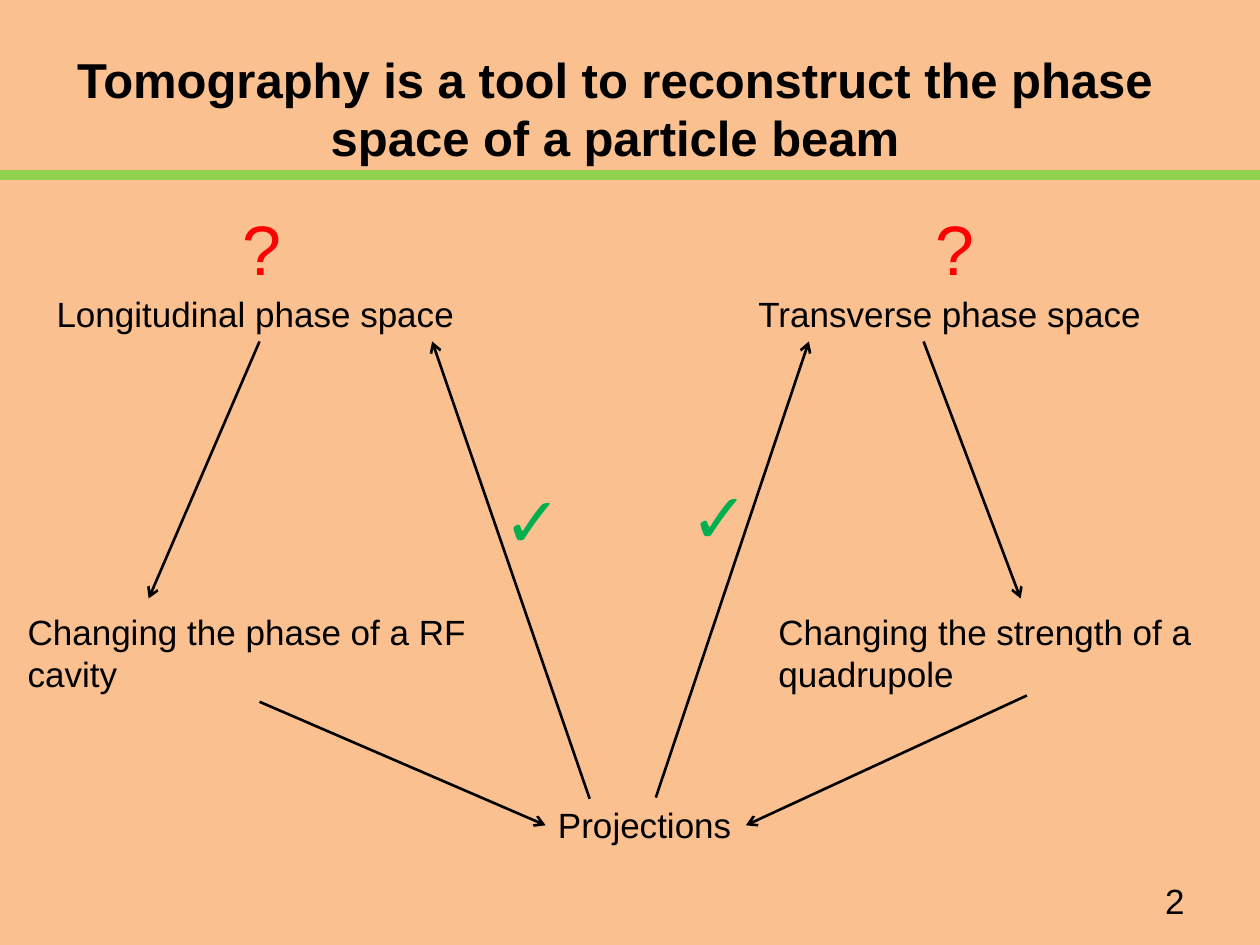
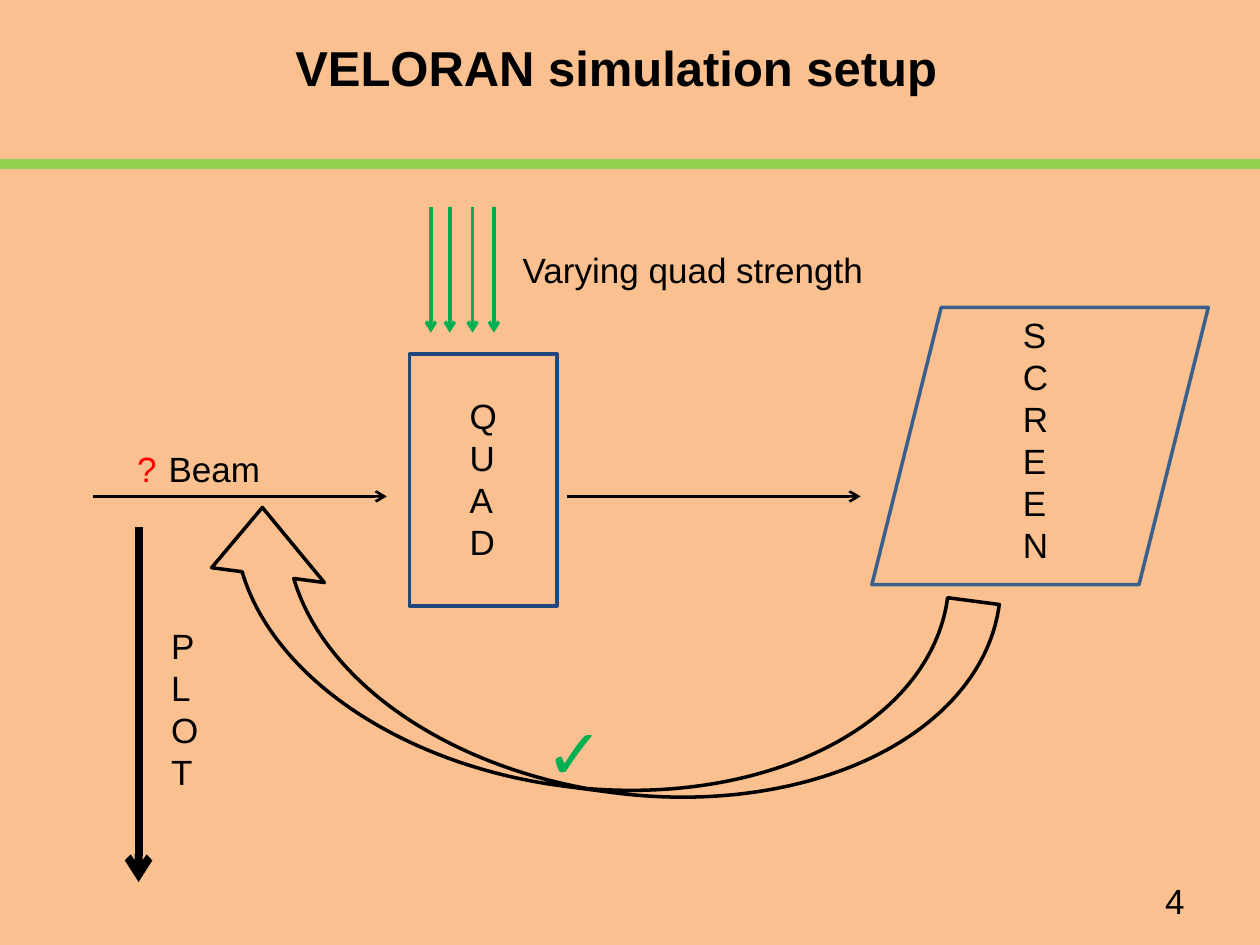
"""Build two slides on phase space tomography and its simulation setup."""
import dataclasses
import typing

import lxml.etree
import pptx
import pptx.dml.color
import pptx.enum.shapes
import pptx.enum.text
import pptx.oxml.ns
import pptx.util

Align = pptx.enum.text.PP_ALIGN
Anchor = pptx.enum.text.MSO_ANCHOR
Fit = pptx.enum.text.MSO_AUTO_SIZE
Preset = pptx.enum.shapes.MSO_SHAPE
Straight = pptx.enum.shapes.MSO_CONNECTOR.STRAIGHT

SLIDE_WIDTH = pptx.util.Inches(10)
SLIDE_HEIGHT = pptx.util.Inches(7.5)
COLUMNS, ROWS = 100, 75
BOTTOM, LEFT, TOP = 2, 1, 0


@dataclasses.dataclass(frozen=True)
class Theme:
    font: str = "Arial"
    paper: str = "FAC090"
    ink: str = "000000"
    band: str = "92D050"
    good: str = "00B050"
    unknown: str = "FF0000"
    quad: str = "1F497D"
    screen: str = "3A5F8C"
    title_size: int = 28
    body_size: int = 20
    mark_size: int = 40
    thin: float = 1.5
    medium: float = 2
    thick: float = 4.5
    band_width: float = 6


THEME = Theme()


class Point(typing.NamedTuple):
    column: float
    row: float


class Joint(typing.NamedTuple):
    label: str
    site: int


class Area(typing.NamedTuple):
    column: float
    row: float
    columns: float
    rows: float


@dataclasses.dataclass(frozen=True)
class Label:
    lines: typing.Sequence[str]
    area: Area
    color: str = THEME.ink
    size: int = THEME.body_size
    bold: bool = False
    align: Align = Align.LEFT
    anchor: Anchor = Anchor.TOP
    fit: Fit = Fit.SHAPE_TO_FIT_TEXT


@dataclasses.dataclass(frozen=True)
class Link:
    start: Point | Joint
    end: Point | Joint
    color: str = THEME.ink
    width: float = THEME.thin
    arrow: bool = True


@dataclasses.dataclass(frozen=True)
class Outline:
    preset: Preset
    area: Area
    color: str
    rotation: float = 0
    adjustments: tuple[float, ...] = ()


def across(columns: float) -> int:
    return round(SLIDE_WIDTH * columns / COLUMNS)


def down(rows: float) -> int:
    return round(SLIDE_HEIGHT * rows / ROWS)


def place(area: Area) -> tuple[int, int, int, int]:
    return (across(area.column), down(area.row),
            across(area.columns), down(area.rows))


def apply(target: typing.Any, values: dict[str, typing.Any]) -> None:
    for name, value in values.items():
        setattr(target, name, value)


def rgb(color: str) -> pptx.dml.color.RGBColor:
    return pptx.dml.color.RGBColor.from_string(color)


def draw_label(page: typing.Any, label: Label) -> typing.Any:
    box = page.shapes.add_textbox(*place(label.area))
    frame = box.text_frame
    apply(frame, {"word_wrap": True, "auto_size": label.fit,
                  "vertical_anchor": label.anchor})
    for index, line in enumerate(label.lines):
        para = frame.add_paragraph() if index else frame.paragraphs[0]
        para.alignment = label.align
        span = para.add_run()
        span.text = line
        apply(span.font, {"name": THEME.font, "bold": label.bold,
                          "size": pptx.util.Pt(label.size)})
        span.font.color.rgb = rgb(label.color)
    return box


def draw_link(page: typing.Any, link: Link, boxes: dict[str, typing.Any]) -> None:
    ends = [(0, 0) if isinstance(end, Joint) else (across(end.column), down(end.row))
            for end in (link.start, link.end)]
    line = page.shapes.add_connector(Straight, *ends[0], *ends[1])
    for end, connect in ((link.start, line.begin_connect), (link.end, line.end_connect)):
        if isinstance(end, Joint):
            connect(boxes[end.label], end.site)
    line.line.color.rgb = rgb(link.color)
    line.line.width = pptx.util.Pt(link.width)
    properties = line._element.spPr
    if link.arrow:
        stroke = properties.find(pptx.oxml.ns.qn("a:ln"))
        lxml.etree.SubElement(stroke, pptx.oxml.ns.qn("a:tailEnd"), type="arrow")
    lxml.etree.SubElement(properties, pptx.oxml.ns.qn("a:effectLst"))


def draw_outline(page: typing.Any, outline: Outline) -> None:
    shape = page.shapes.add_shape(outline.preset, *place(outline.area))
    for index, value in enumerate(outline.adjustments):
        shape.adjustments[index] = value
    shape.rotation = outline.rotation
    shape.shadow.inherit = False
    shape.fill.background()
    shape.line.color.rgb = rgb(outline.color)
    shape.line.width = pptx.util.Pt(THEME.medium)


def check_mark(column: float, row: float) -> Label:
    return Label(["✓"], Area(column, row, 8.7, 7.7), THEME.good, THEME.mark_size)


def question_mark(column: float, row: float, size: int, rows: float) -> Label:
    return Label(["?"], Area(column, row, 5, rows), THEME.unknown, size)


def stacked(word: str, column: float, row: float, rows: float) -> Label:
    return Label(list(word), Area(column, row, 4.6, rows))


def add_page(deck: typing.Any, title: str, title_area: Area, band_row: float,
             number: int, labels: list[Label], links: list[Link],
             outlines: typing.Sequence[Outline] = ()) -> None:
    page = deck.slides.add_slide(deck.slide_layouts[6])
    page.background.fill.solid()
    page.background.fill.fore_color.rgb = rgb(THEME.paper)
    heading = Label([title], title_area, size=THEME.title_size, bold=True,
                    align=Align.CENTER)
    footer = Label([str(number)], Area(71.7, 69.5, 23.3, 4), align=Align.RIGHT,
                   anchor=Anchor.MIDDLE, fit=Fit.NONE)
    band = Link(Point(0, band_row), Point(COLUMNS, band_row), THEME.band,
                THEME.band_width, arrow=False)
    for outline in outlines:
        draw_outline(page, outline)
    boxes = {label.lines[0]: draw_label(page, label)
             for label in (heading, *labels, footer)}
    for link in (*links, band):
        draw_link(page, link, boxes)


def add_tomography(deck: typing.Any) -> None:
    longitudinal = "Longitudinal phase space"
    cavity = "Changing the phase of a RF cavity"
    projections = "Projections"
    labels = [
        Label([longitudinal], Area(3.5, 22.7, 34.2, 4.4)),
        Label(["Transverse phase space"], Area(59.2, 22.7, 34.2, 4.4)),
        Label([cavity], Area(1.2, 48, 38.8, 7.7)),
        Label(["Changing the strength of a quadrupole"], Area(60.8, 48, 36.7, 7.7)),
        Label([projections], Area(43.3, 63.3, 17.5, 4.4)),
        check_mark(39, 37.4),
        check_mark(53.8, 37.1),
        *(question_mark(column, 15.8, THEME.mark_size, 7.7) for column in (18.3, 73.3)),
    ]
    links = [
        Link(Joint(longitudinal, BOTTOM), Point(11.8, 47.5)),
        Link(Point(73.3, 27.1), Point(81, 47.5)),
        Link(Joint(cavity, BOTTOM), Joint(projections, LEFT)),
        Link(Point(81.5, 55.2), Point(59.2, 65.5)),
        Link(Point(46.8, 63.4), Point(34.3, 27.1)),
        Link(Joint(projections, TOP), Point(64.2, 27.1)),
    ]
    add_page(deck, "Tomography is a tool to reconstruct the phase space of a particle beam",
             Area(1.2, 3.4, 95.2, 10.4), 13.9, 2, labels, links)


def add_simulation(deck: typing.Any) -> None:
    beam_row = 39.4
    labels = [
        Label(["Beam"], Area(12.4, 35, 15, 4.4)),
        Label(["Varying quad strength"], Area(40.5, 19.2, 34, 4.4)),
        stacked("QUAD", 36.3, 30.8, 14.5),
        stacked("SCREEN", 80.2, 24.4, 21.2),
        stacked("PLOT", 12.6, 49.1, 14.5),
        question_mark(9.9, 35, THEME.body_size, 4.4),
        check_mark(42.3, 55.8),
    ]
    links = [
        *(Link(Point(column, beam_row), Point(column + 23.3, beam_row))
          for column in (7.4, 45)),
        *(Link(Point(column, 16.4), Point(column, 26.4), THEME.good, THEME.medium)
          for column in (34.2, 35.7, 37.5, 39.2)),
        Link(Point(11, 41.8), Point(11, 70), width=THEME.thick),
    ]
    outlines = [
        Outline(Preset.RECTANGLE, Area(32.5, 28.1, 11.7, 20), THEME.quad),
        Outline(Preset.PARALLELOGRAM, Area(69.2, 24.4, 26.7, 22), THEME.screen),
        Outline(Preset.CURVED_LEFT_ARROW, Area(37.2, 21.4, 18.8, 63.5), THEME.ink,
                97.5, (0.22, 0.48, 0.28)),
    ]
    add_page(deck, "VELORAN simulation setup", Area(0, 2.5, 97.8, 5.7), 13, 4,
             labels, links, outlines)


def main() -> None:
    deck = pptx.Presentation()
    apply(deck, {"slide_width": SLIDE_WIDTH, "slide_height": SLIDE_HEIGHT})
    add_tomography(deck)
    add_simulation(deck)
    deck.save("out.pptx")


if __name__ == "__main__":
    main()
